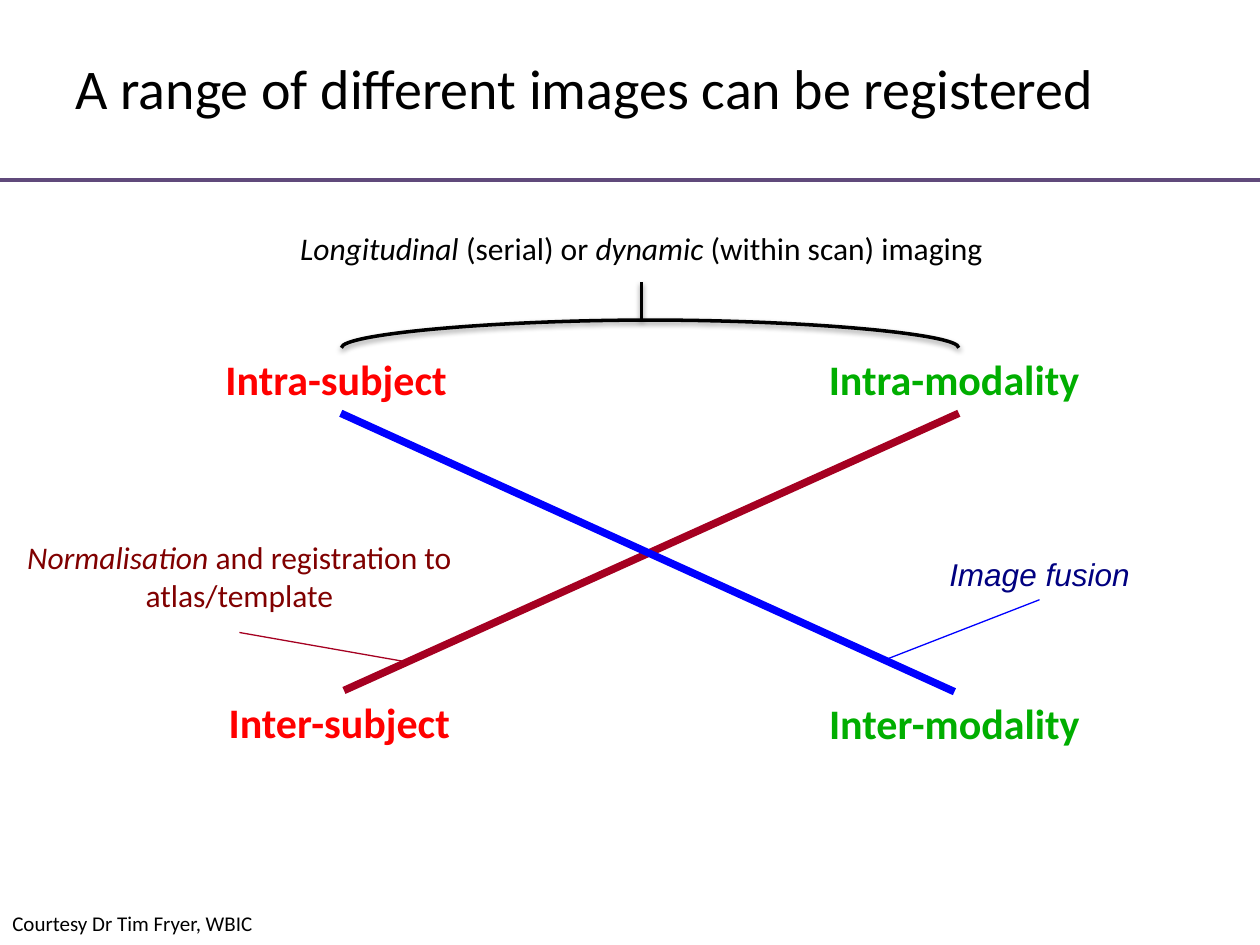
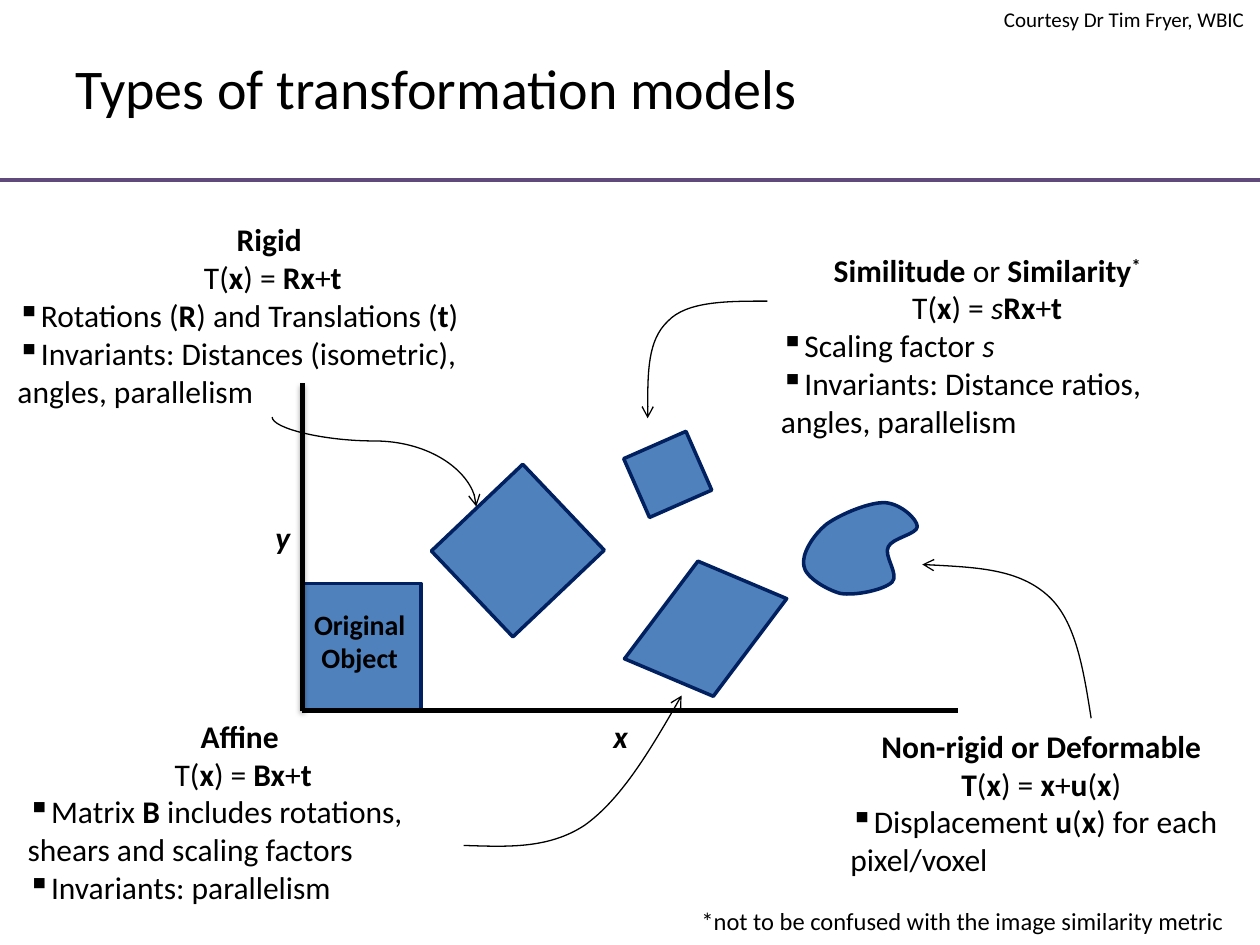
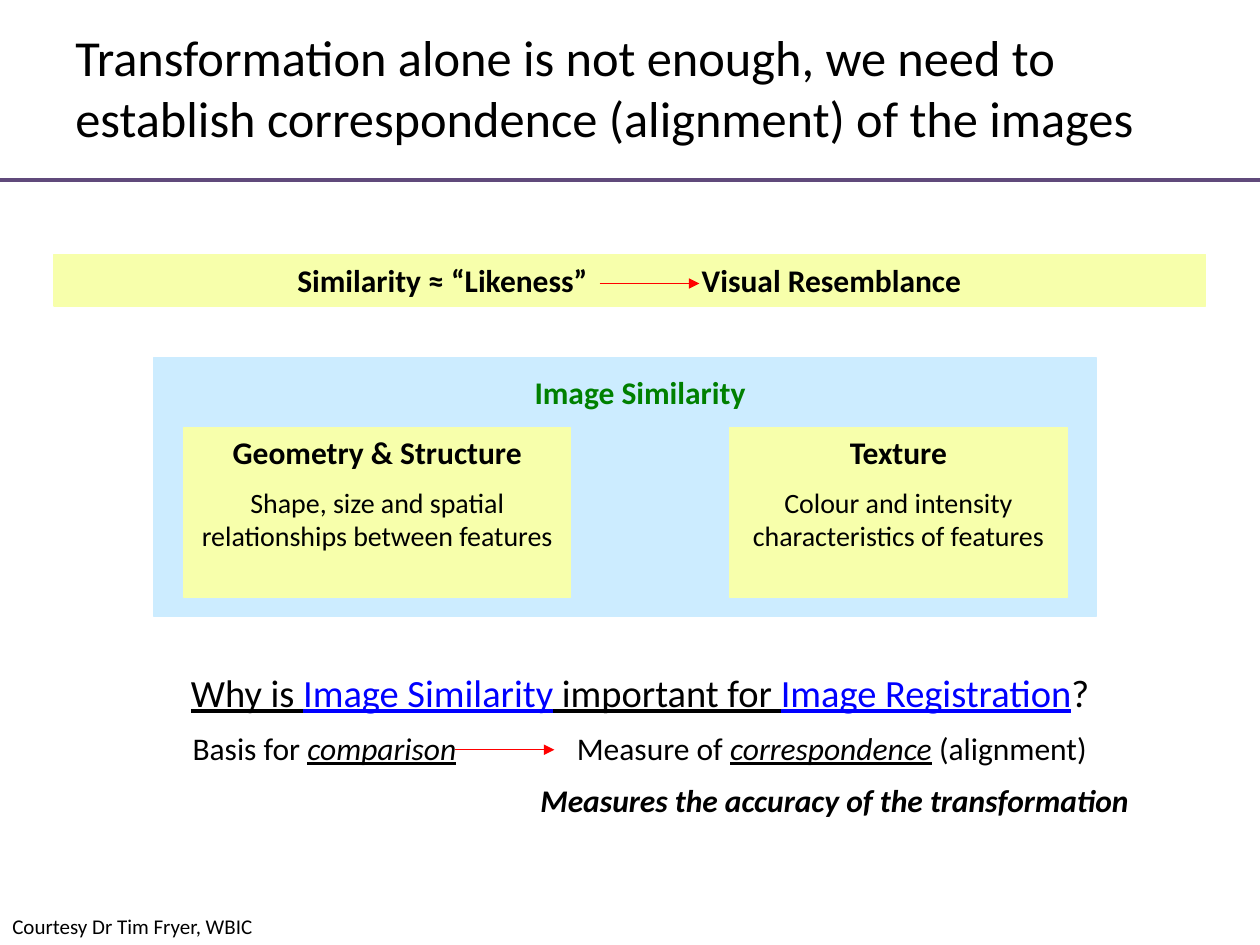
from lxml import etree
from pptx import Presentation
from pptx.dml.color import RGBColor
from pptx.enum.shapes import MSO_CONNECTOR, MSO_SHAPE
from pptx.enum.text import MSO_ANCHOR, PP_ALIGN
from pptx.oxml.ns import qn
from pptx.util import Emu, Inches, Pt

LEFT, CENTER, RIGHT = PP_ALIGN.LEFT, PP_ALIGN.CENTER, PP_ALIGN.RIGHT
TOP, MIDDLE = MSO_ANCHOR.TOP, MSO_ANCHOR.MIDDLE
RECTANGLE, PARALLELOGRAM = MSO_SHAPE.RECTANGLE, MSO_SHAPE.PARALLELOGRAM
STRAIGHT = MSO_CONNECTOR.STRAIGHT
TOP_SIDE, BOTTOM_SIDE = 0, 2

COLORS = {
    "black": "000000", "rule": "604A7B", "red": "FF0000", "green": "00AE00",
    "blue": "0000FF", "navy": "000080", "maroon": "800000", "crimson": "A50021",
    "object": "4F81BD", "outline": "002060", "panel": "CCECFF",
    "yellow": "F7FFAB", "heading": "008000",
}
COURTESY = "Courtesy Dr Tim Fryer, WBIC"

# A paragraph is a list of runs; a run is text or (text, style flags[, colour]).
# Flags: b bold, i italic, u underlined, ^ superscript.

# Slide 1
REGISTRATION_TITLE = "A range of different images can be registered"
COMPARISONS = {  # text, colour, box
    "intra_subject": ("Intra-subject ", "red", (1.55, 2.76, 2.31, 0.52)),
    "inter_subject": ("Inter-subject ", "red", (1.47, 5.48, 2.52, 0.83)),
    "intra_modality": ("Intra-modality ", "green", (6.36, 2.76, 2.5, 0.52)),
    "inter_modality": ("Inter-modality", "green", (6.31, 5.49, 2.53, 0.83)),
}
DIAGONALS = [("intra_modality", "inter_subject", "crimson"),
             ("intra_subject", "inter_modality", "blue")]
CALLOUTS = [  # runs, font, text colour, box, line end, line colour, width, shadow
    ([("Longitudinal", "i"), " (serial) or ", ("dynamic ", "i"),
      "(within scan) imaging"],
     "Calibri", "black", (1.99, 1.77, 6.2, 0.47), (5.09, 2.54), "black", 2, True),
    ([("Normalisation ", "i"), "and registration to atlas/template"],
     "Calibri", "maroon", (0, 4.22, 3.8, 0.8), (3.21, 5.25), "crimson", 0.75, False),
    ([("Image fusion", "i")],
     "Arial", "navy", (6.5, 4.36, 3.5, 0.4), (6.99, 5.25), "blue", 0.75, False),
]
BRACE = [(2.71, 2.76), (2.71, 2.65), (3.94, 2.54), (5.16, 2.54),
         (6.39, 2.54), (7.61, 2.65), (7.61, 2.76)]

# Slide 2
MODELS_TITLE = "Types of transformation models"
MODELS = [  # box, heading, formula, bulleted paragraphs
    ((0.04, 1.7, 4.25, 1.6), [("Rigid ", "b")],
     ["T(", ("x", "b"), ") = ", ("Rx", "b"), "+", ("t", "b")],
     [["Rotations (", ("R", "b"), ") and Translations (", ("t", "b"), ")"],
      ["Invariants: Distances (isometric), angles, parallelism"]]),
    ((0.12, 5.64, 3.62, 1.61), [("Affine ", "b")],
     ["T(", ("x", "b"), ") = ", ("Bx", "b"), "+", ("t", "b")],
     [["Matrix ", ("B", "b"), " includes rotations, shears and scaling factors"],
      ["Invariants: parallelism"]]),
    ((6.65, 5.72, 3.23, 1.3), [("Non-rigid or Deformable", "b")],
     [("T", "b"), "(", ("x", "b"), ") = ", ("x", "b"), "+", ("u", "b"),
      "(", ("x", "b"), ")"],
     [["Displacement ", ("u", "b"), "(", ("x", "b"), ") for each pixel/voxel"]]),
    ((6.1, 1.94, 3.47, 1.6),
     [("Similitude ", "b"), "or", (" Similarity", "b"), ("*", "b^")],
     ["T(", ("x", "b"), ") = ", ("s", "i"), ("Rx", "b"), "+", ("t", "b")],
     [["Scaling factor ", ("s", "i")],
      ["Invariants: Distance ratios, angles, parallelism"]]),
]
OBJECTS = [  # preset, box, rotation
    (RECTANGLE, (2.4, 4.63, 0.94, 1), 0),
    (RECTANGLE, (3.64, 3.87, 0.94, 1), 46.5),
    (PARALLELOGRAM, (5.1, 4.52, 1, 0.94), 22.9),
    (RECTANGLE, (5.03, 3.51, 0.54, 0.51), 336.3),
]
DEFORMED_OBJECT = [
    (6.56, 4.16), (6.45, 4.25), (6.36, 4.4), (6.38, 4.49),
    (6.39, 4.58), (6.56, 4.68), (6.67, 4.71), (6.79, 4.73), (7.02, 4.68),
    (7.08, 4.62), (7.14, 4.56), (7.01, 4.41), (7.05, 4.34), (7.08, 4.27),
    (7.28, 4.24), (7.28, 4.18), (7.28, 4.12), (7.15, 4), (7.03, 3.99),
    (6.91, 3.98), (6.67, 4.08), (6.56, 4.16)]
MODEL_ARROWS = [  # each runs from its description to its object
    [(2.16, 3.31), (2.16, 3.4), (2.57, 3.5), (2.97, 3.5),
     (3.38, 3.5), (3.78, 3.76), (3.78, 4.02)],
    [(3.68, 6.71), (4.02, 6.72), (4.35, 6.74), (4.64, 6.55),
     (4.92, 6.35), (5.17, 5.94), (5.41, 5.52)],
    [(8.66, 5.7), (8.6, 5.32), (8.54, 4.93), (8.32, 4.73),
     (8.09, 4.52), (7.71, 4.5), (7.32, 4.48)],
    [(6.09, 2.39), (5.77, 2.39), (5.45, 2.39), (5.3, 2.55),
     (5.14, 2.7), (5.14, 3.01), (5.14, 3.32)],
]
AXIS_ORIGIN = (2.4, 5.64)
AXES = [((7.6, 5.64), False), ((2.4, 3.04), True)]  # end, shadow
AXIS_LABELS = [("y", (2.01, 4.06, 0.47, 0.4)), ("x", (4.69, 5.64, 0.47, 0.4))]
FOOTNOTE = "*not to be confused with the image similarity metric"

# Slide 3
SIMILARITY_TITLE = ("Transformation alone is not enough, we need to establish "
                    "correspondence (alignment) of the images")
LIKENESS = "Similarity ≈ “Likeness”\tVisual Resemblance"
ASPECTS = [
    ((1.46, 3.39, 3.07, 1.35), "Geometry & Structure",
     "Shape, size and spatial relationships between features"),
    ((5.79, 3.39, 2.68, 1.35), "Texture",
     "Colour and intensity characteristics of features"),
]
QUESTION = [("Why is ", "u"), ("Image Similarity", "u", "blue"),
            (" important for ", "u"), ("Image Registration", "u", "blue"), "?"]
REASON = ["\tBasis for ", ("comparison", "iu"), "\tMeasure of ",
          ("correspondence", "iu"), " (alignment)"]
CONCLUSION = [("Measures the accuracy of the transformation", "bi")]
RED_ARROWS = [((3.61, 5.95), (4.4, 5.95)), ((4.76, 2.25), (5.55, 2.25))]


def rgb(name):
    return RGBColor.from_string(COLORS[name])


def inches(values):
    return [Inches(value) for value in values]


def write(paragraph, runs, size=18, align=LEFT, color="black", font="Calibri"):
    paragraph.alignment = align
    for item in runs:
        text, flags, run_color = ((item,) if isinstance(item, str) else item) + ("", color)[
            (0 if isinstance(item, str) else len(item) - 1):]
        run = paragraph.add_run()
        run.text = text
        run.font.name = font
        run.font.size = Pt(size)
        run.font.bold = "b" in flags
        run.font.italic = "i" in flags
        run.font.underline = "u" in flags
        run.font.color.rgb = rgb(run_color)
        if "^" in flags:
            run.font._element.set("baseline", "30000")


def add_text(slide, box, runs, anchor=TOP, wrap=True, **style):
    text_box = slide.shapes.add_textbox(*inches(box))
    frame = text_box.text_frame
    frame.word_wrap = wrap
    frame.vertical_anchor = anchor
    write(frame.paragraphs[0], runs, **style)
    return text_box


def add_bullet(paragraph):
    properties = paragraph._p.get_or_add_pPr()
    etree.SubElement(properties, qn("a:buChar"), char="▪")


def add_tabs(paragraph, positions):
    tabs = etree.SubElement(paragraph._p.get_or_add_pPr(), qn("a:tabLst"))
    for position in positions:
        etree.SubElement(tabs, qn("a:tab"), pos=str(Inches(position)), algn="l")


def style_line(shape, color, width, arrow=None, shadow=False):
    shape.line.color.rgb = rgb(color)
    shape.line.width = Pt(width)
    properties = shape.element.spPr
    if arrow:
        etree.SubElement(properties.find(qn("a:ln")), qn("a:tailEnd"), type=arrow)
    for effects in properties.findall(qn("a:effectLst")):
        properties.remove(effects)
    effects = etree.SubElement(properties, qn("a:effectLst"))
    if shadow:
        outer = etree.SubElement(effects, qn("a:outerShdw"), blurRad=str(Pt(3.1)),
                                 dist=str(Pt(1.6)), dir="5400000", rotWithShape="0")
        black = etree.SubElement(outer, qn("a:srgbClr"), val=COLORS["black"])
        etree.SubElement(black, qn("a:alpha"), val="38000")


def add_line(slide, start, end, color, width, **style):
    line = slide.shapes.add_connector(STRAIGHT, *inches(start + end))
    style_line(line, color, width, **style)
    return line


def add_box(slide, box, fill, outline, width, preset=RECTANGLE, rotation=0):
    shape = slide.shapes.add_shape(preset, *inches(box))
    shape.rotation = rotation
    shape.fill.solid()
    shape.fill.fore_color.rgb = rgb(fill)
    style_line(shape, outline, width)
    shape.text_frame.word_wrap = True
    shape.text_frame.vertical_anchor = TOP
    return shape


def add_curve(slide, points, color, width, fill=None, **style):
    """Draw Bézier segments: a start point, then two controls and an end each."""
    start, *others = [tuple(inches(point)) for point in points]
    builder = slide.shapes.build_freeform(*start, scale=1.0)
    builder.add_line_segments(others, close=fill is not None)
    shape = builder.convert_to_shape(Emu(0), Emu(0))
    segments = list(shape.element.iter(qn("a:lnTo")))
    for first in range(0, len(others), 3):
        bezier = etree.Element(qn("a:cubicBezTo"))
        segments[first].addprevious(bezier)
        for segment in segments[first:first + 3]:
            bezier.append(segment[0])
            segment.getparent().remove(segment)
    if fill:
        shape.fill.solid()
        shape.fill.fore_color.rgb = rgb(fill)
    else:
        shape.fill.background()
    style_line(shape, color, width, **style)


def add_slide(presentation, title, courtesy_at, title_size=32):
    slide = presentation.slides.add_slide(presentation.slide_layouts[6])
    add_text(slide, (0.5, 0.3, 9, 0.78), [title], anchor=MIDDLE, size=title_size)
    add_line(slide, (10, 1.43), (0, 1.43), "rule", 2)
    add_text(slide, courtesy_at + (2.13, 0.3), [COURTESY], wrap=False, size=12)
    return slide


def build_registration(presentation):
    slide = add_slide(presentation, REGISTRATION_TITLE, (0, 7.18))
    labels = {name: add_text(slide, box, [(text, "b")], size=24, align=CENTER, color=color)
              for name, (text, color, box) in COMPARISONS.items()}
    for upper, lower, color in DIAGONALS:
        line = add_line(slide, (0, 0), (1, 1), color, 4.31)
        line.begin_connect(labels[upper], BOTTOM_SIDE)
        line.end_connect(labels[lower], TOP_SIDE)
    for runs, font, color, box, end, line_color, width, shadow in CALLOUTS:
        label = add_text(slide, box, runs, align=CENTER, color=color, font=font)
        line = add_line(slide, (0, 0), end, line_color, width, shadow=shadow)
        line.begin_connect(label, BOTTOM_SIDE)
    add_curve(slide, BRACE, "black", 2, shadow=True)


def build_models(presentation):
    slide = add_slide(presentation, MODELS_TITLE, (7.87, 0))
    for preset, box, rotation in OBJECTS:
        add_box(slide, box, "object", "outline", 2, preset, rotation)
    add_curve(slide, DEFORMED_OBJECT, "outline", 2, fill="object")
    for end, shadow in AXES:
        add_line(slide, AXIS_ORIGIN, end, "black", 2.5, shadow=shadow)
    for box, heading, formula, bullets in MODELS:
        frame = add_text(slide, box, heading, align=CENTER).text_frame
        write(frame.add_paragraph(), formula, align=CENTER)
        for runs in bullets:
            paragraph = frame.add_paragraph()
            write(paragraph, runs)
            add_bullet(paragraph)
    for points in MODEL_ARROWS:
        add_curve(slide, points, "black", 0.75, arrow="arrow")
    add_text(slide, (2.09, 4.77, 1.53, 0.64), [("Original Object", "b")],
             size=16, align=CENTER)
    for letter, box in AXIS_LABELS:
        add_text(slide, box, [(letter, "bi")], align=CENTER)
    add_text(slide, (5.24, 7.14, 4.57, 0.34), [FOOTNOTE], size=14, align=RIGHT)


def build_similarity(presentation):
    slide = add_slide(presentation, SIMILARITY_TITLE, (0, 7.2), title_size=28.8)
    add_box(slide, (1.22, 2.84, 7.48, 2.05), "panel", "panel", 0.75)

    band = add_box(slide, (0.43, 2.02, 9.14, 0.41), "yellow", "yellow", 0.75)
    band.text_frame.margin_left = Inches(1.93)
    likeness = band.text_frame.paragraphs[0]
    write(likeness, [(LIKENESS, "b")])
    add_tabs(likeness, [3.21])

    add_text(slide, (3.19, 2.91, 3.78, 0.4), [("Image Similarity", "b")],
             align=CENTER, color="heading")
    for box, heading, description in ASPECTS:
        frame = add_box(slide, box, "yellow", "yellow", 0.75).text_frame
        write(frame.paragraphs[0], [(heading, "b")], align=CENTER)
        paragraph = frame.add_paragraph()
        paragraph.space_before = Pt(8)
        write(paragraph, [description], size=16, align=CENTER)

    frame = add_text(slide, (1.1, 5.26, 7.96, 1.3), QUESTION, size=22,
                     align=CENTER).text_frame
    for runs, align, tabs in [(REASON, LEFT, [0.33, 3.38]), (CONCLUSION, RIGHT, [])]:
        paragraph = frame.add_paragraph()
        paragraph.line_spacing = Pt(21.6)
        paragraph.space_before = Pt(8)
        write(paragraph, runs, align=align)
        if tabs:
            add_tabs(paragraph, tabs)
    for start, end in RED_ARROWS:
        add_line(slide, start, end, "red", 0.75, arrow="triangle")


def main():
    presentation = Presentation()
    presentation.slide_width = Inches(10)
    presentation.slide_height = Inches(7.5)
    build_registration(presentation)
    build_models(presentation)
    build_similarity(presentation)
    presentation.save("out.pptx")


if __name__ == "__main__":
    main()
